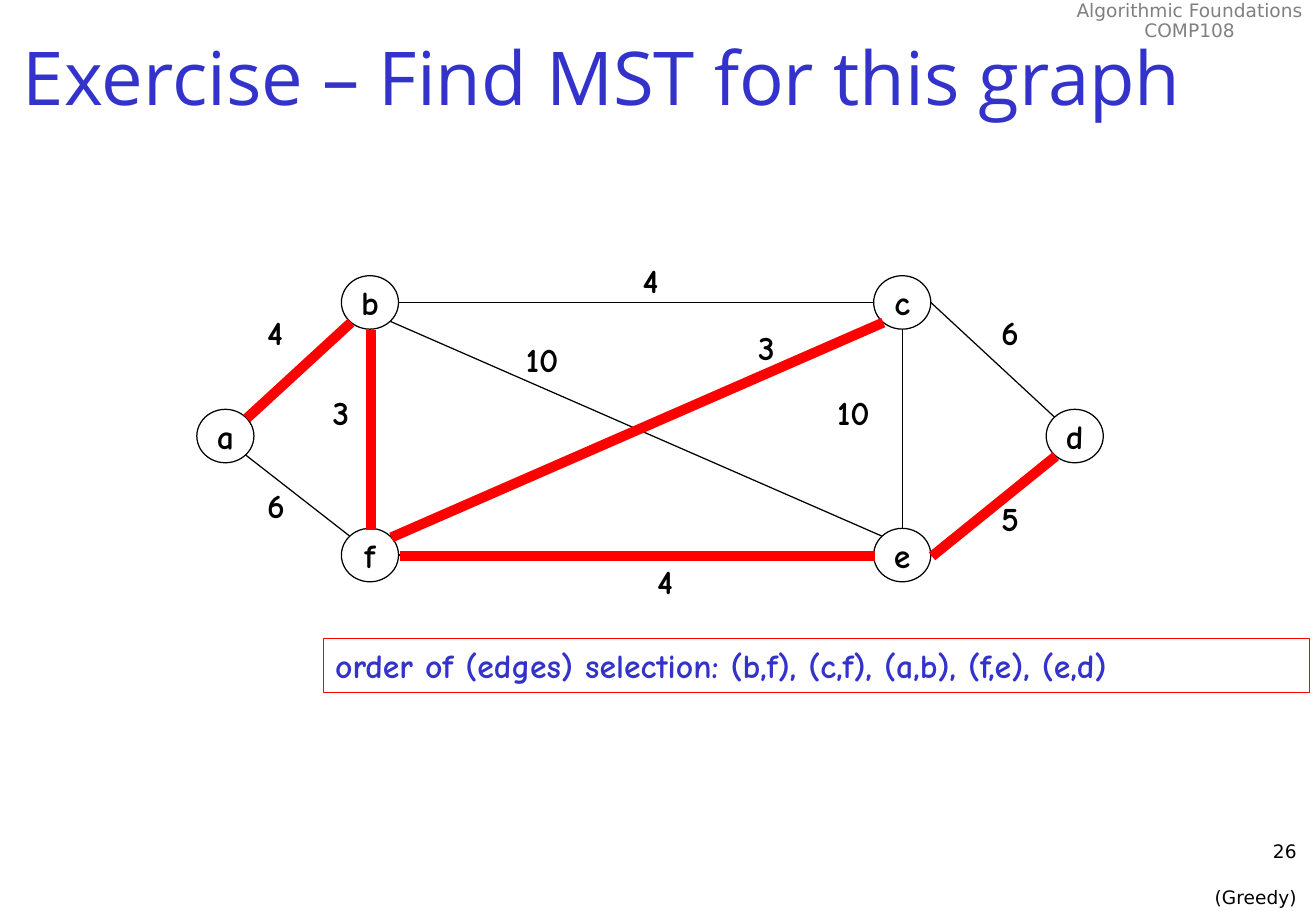
from math import cos, radians, sin

from lxml.etree import SubElement
from pptx import Presentation
from pptx.dml.color import RGBColor
from pptx.enum.shapes import MSO_CONNECTOR as Connector, MSO_SHAPE as Shape
from pptx.enum.text import MSO_ANCHOR as Anchor, PP_ALIGN as Align
from pptx.oxml.ns import qn
from pptx.util import Emu, Pt

# Content
COURSE = ["Algorithmic Foundations", "COMP108"]
TITLE = "Exercise – Find MST for this graph"
FOOTER = ["26", "(Greedy)"]
ORDER = "order of (edges) selection: (b,f), (c,f), (a,b), (f,e), (e,d)"

# Node name: left, top
NODES = {
    "a": (162, 337), "b": (281, 227), "f": (281, 435),
    "e": (719, 435), "c": (719, 227), "d": (861, 337),
}
# Start node and side, end node and side, weight, weight left and top, selected
EDGES = [
    ("a", "NE", "b", "SW", 4, (210, 252), True),
    ("a", "SE", "f", "NW", 6, (210, 394), False),
    ("b", "S", "f", "N", 3, (264, 318), True),
    ("f", "NE", "c", "SW", 3, (614, 264), True),
    ("f", "E", "e", "W", 4, (531, 457), True),
    ("b", "E", "c", "W", 4, (519, 209), False),
    ("b", "SE", "e", "NW", 10, (423, 274), False),
    ("c", "S", "e", "N", 10, (679, 318), False),
    ("c", "E", "d", "NW", 6, (814, 252), False),
    ("e", "E", "d", "SW", 5, (814, 405), True),
]

# Layout and style
PX = 9144  # 100 px to the inch
NODE_W, NODE_H = 47, 44
SIDES = ["E", "SE", "S", "SW", "W", "NW", "N", "NE"]  # clockwise, 45 degrees apart
BLACK = RGBColor(0x00, 0x00, 0x00)
WHITE = RGBColor(0xFF, 0xFF, 0xFF)
GREY = RGBColor(0x80, 0x80, 0x80)
BLUE = RGBColor(0x33, 0x33, 0xCC)
RED = RGBColor(0xFF, 0x00, 0x00)
GRAPH_FONT, SMALL_FONT, TITLE_FONT = "Comic Neue", "DejaVu Sans", "Open Sans"


def px(*lengths):
    return [Emu(round(length * PX)) for length in lengths]


prs = Presentation()
prs.slide_width, prs.slide_height = px(1083, 750)
slide = prs.slides.add_slide(prs.slide_layouts[6])


def write(holder, lines, font=GRAPH_FONT, size=20, color=BLACK, bold=False,
          align=Align.LEFT, anchor=Anchor.TOP, wrap=False, spacing=None, gap=0):
    frame = holder.text_frame
    frame.word_wrap = wrap
    frame.vertical_anchor = anchor
    for i, line in enumerate(lines):
        paragraph = frame.add_paragraph() if i else frame.paragraphs[0]
        paragraph.alignment = align
        paragraph.line_spacing = spacing
        if i and gap:
            paragraph.space_before = Pt(gap)
        run = paragraph.add_run()
        run.text = line
        run.font.name, run.font.size, run.font.bold = font, Pt(size), bold
        run.font.color.rgb = color


def text_box(left, top, width, height):
    return slide.shapes.add_textbox(*px(left, top, width, height))


def outlined(kind, left, top, width, height, color):
    shape = slide.shapes.add_shape(kind, *px(left, top, width, height))
    shape.shadow.inherit = False
    shape.line.color.rgb = color
    shape.line.width = Pt(0.75)
    return shape


def rim_point(node, side):
    left, top = NODES[node]
    angle = radians(45 * SIDES.index(side))
    return (left + NODE_W / 2 * (1 + cos(angle)),
            top + NODE_H / 2 * (1 + sin(angle)))


def draw_edge(edge, color, width, shift=0):
    start_node, start_side, end_node, end_side = edge[:4]
    ends = rim_point(start_node, start_side) + rim_point(end_node, end_side)
    line = slide.shapes.add_connector(
        Connector.STRAIGHT, *px(*(value + shift for value in ends)))
    line.line.color.rgb = color
    line.line.width = Pt(width)
    SubElement(line._element.spPr, qn("a:effectLst"))


# Header, footer and title
write(text_box(875, -4, 208, 43), COURSE, font=SMALL_FONT, size=11, color=GREY,
      align=Align.CENTER, spacing=0.9)
write(text_box(851, 687, 226, 50), FOOTER, font=SMALL_FONT, size=11,
      align=Align.RIGHT, wrap=True, gap=14)
write(text_box(9, 0, 1074, 125), [TITLE], font=TITLE_FONT, size=44, color=BLUE,
      anchor=Anchor.MIDDLE, wrap=True)

# Nodes
for name, (left, top) in NODES.items():
    node = outlined(Shape.OVAL, left, top, NODE_W, NODE_H, BLACK)
    node.fill.solid()
    node.fill.fore_color.rgb = WHITE
    write(node, [name], bold=True, align=Align.CENTER, anchor=Anchor.MIDDLE)

# Edges, then their weights
for edge in EDGES:
    draw_edge(edge, BLACK, 0.75)
for *_, weight, (left, top), _selected in EDGES:
    width = 40 if weight < 10 else 59
    write(text_box(left, top, width, 43), [str(weight)], bold=True)

# Selected edges of the spanning tree
for edge in EDGES:
    if edge[-1]:
        draw_edge(edge, RED, 6, shift=1)

# Order of selection
order = outlined(Shape.RECTANGLE, 266, 526, 812, 44, RED)
order.fill.background()
write(order, [ORDER], color=BLUE, bold=True, wrap=True)

prs.save("out.pptx")
